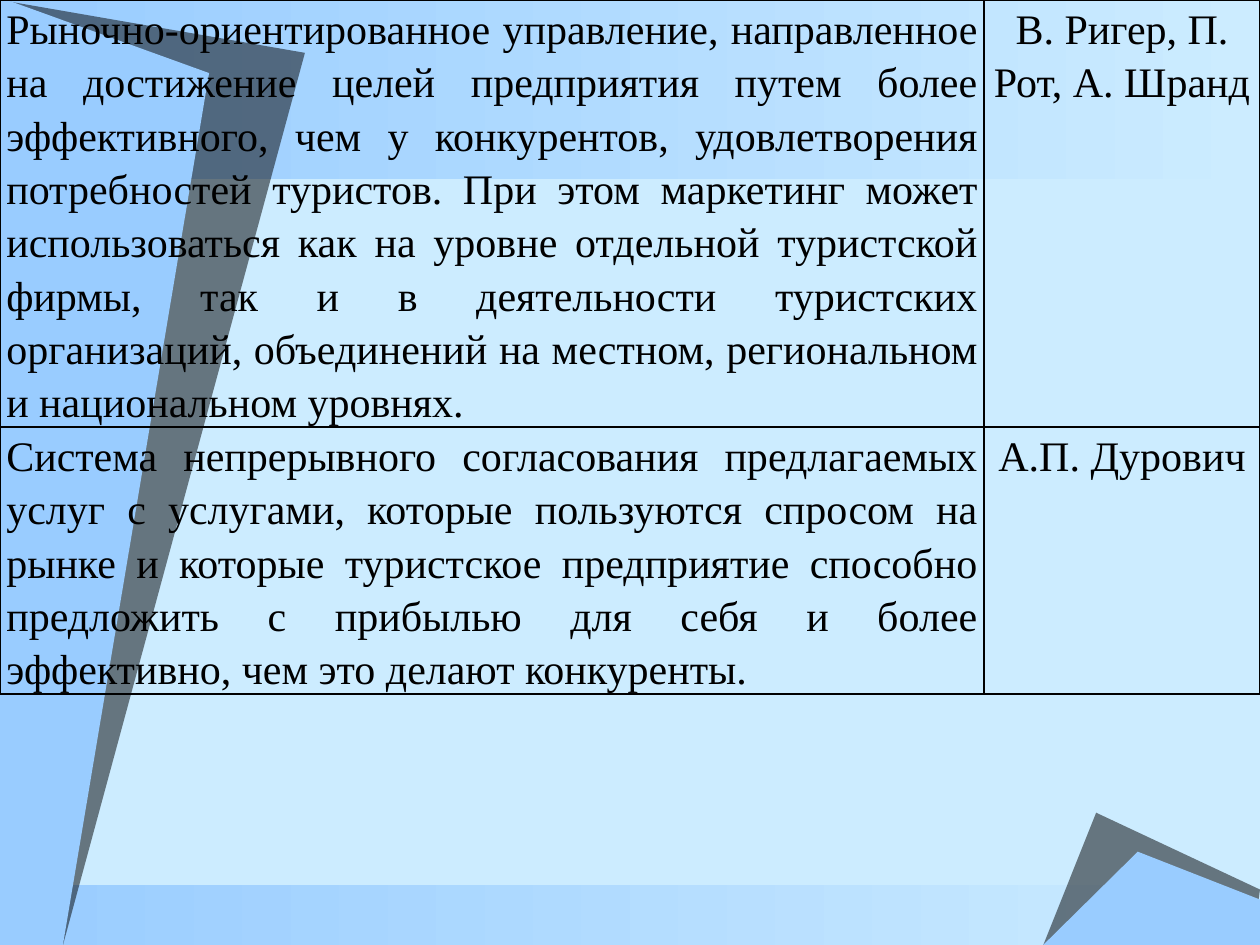
from lxml.etree import SubElement
from pptx import Presentation
from pptx.dml.color import RGBColor
from pptx.enum.shapes import MSO_SHAPE
from pptx.enum.text import PP_ALIGN
from pptx.oxml.ns import qn
from pptx.util import Inches, Pt

W, H = 10, 7.5
BLACK = RGBColor(0x00, 0x00, 0x00)
BLUE = RGBColor(0x99, 0xCC, 0xFF)
PALE = RGBColor(0xCC, 0xEC, 0xFF)
FONT = "Times New Roman"

prs = Presentation()
prs.slide_width, prs.slide_height = Inches(W), Inches(H)
s = prs.slides.add_slide(prs.slide_layouts[6])
s.background.fill.solid()
s.background.fill.fore_color.rgb = PALE


def add_band(top, height):
    """Full-width band fading from blue to the background colour."""
    sp = s.shapes.add_shape(MSO_SHAPE.RECTANGLE, 0, Inches(top), Inches(W), Inches(height))
    sp.shadow.inherit = False
    sp.line.fill.background()
    sp.fill.gradient()
    sp.fill.gradient_angle = 0
    for stop, color, position in zip(sp.fill.gradient_stops, (BLUE, PALE), (0, 1)):
        stop.color.rgb = color
        stop.position = position


def add_polygon(points, color, alpha=100):
    """Closed outline through points in inches, alpha in percent."""
    start, *rest = [(Inches(x), Inches(y)) for x, y in points]
    builder = s.shapes.build_freeform(*start)
    builder.add_line_segments(rest, close=True)
    sp = builder.convert_to_shape()
    sp.shadow.inherit = False
    sp.line.fill.background()
    sp.fill.solid()
    sp.fill.fore_color.rgb = color
    if alpha < 100:
        clr = sp.fill._xPr.find(qn("a:solidFill"))[0]
        SubElement(clr, qn("a:alpha")).set("val", str(alpha * 1000))


# Bottom band and right corner
add_band(7.02, 0.48)
add_polygon([(8.7, 6.45), (W, 7.06), (9.94, H), (8.28, H)], BLACK, 50)
add_polygon([(8.28, H), (9.03, 6.76), (W, 7.14), (W, H)], BLUE)

# Top band and left wedge
add_band(0, 1.42)
add_polygon([(0, 0), (2.42, 0.42), (0.5, H), (0, H)], BLACK, 50)
add_polygon([(0, -0.02), (1.66, 0.58), (0.5, H), (0, H)], BLUE)

# Definitions and their authors
DEFINITIONS = [
    ("Рыночно-ориентированное управление, направленное на достижение целей "
     "предприятия путем более эффективного, чем у конкурентов, удовлетворения "
     "потребностей туристов. При этом маркетинг может использоваться как на уровне "
     "отдельной туристской фирмы, так и в деятельности туристских организаций, "
     "объединений на местном, региональном и национальном уровнях.",
     "В. Ригер, П. Рот, А. Шранд"),
    ("Система непрерывного согласования предлагаемых услуг с услугами, которые "
     "пользуются спросом на рынке и которые туристское предприятие способно "
     "предложить с прибылью для себя и более эффективно, чем это делают конкуренты.",
     "А.П. Дурович"),
]
COLS = (7.81, 2.19)
ROWS = (3.39, 2.12)
ALIGNS = (PP_ALIGN.JUSTIFY, PP_ALIGN.CENTER)

table = s.shapes.add_table(len(ROWS), len(COLS), 0, 0, Inches(W), Inches(sum(ROWS))).table
table.first_row = table.horz_banding = False
for column, width in zip(table.columns, COLS):
    column.width = Inches(width)
for row, height, texts in zip(table.rows, ROWS, DEFINITIONS):
    row.height = Inches(height)
    for cell, text, align in zip(row.cells, texts, ALIGNS):
        cell.margin_left = cell.margin_right = Inches(0.05)
        cell.margin_top = cell.margin_bottom = 0
        tcPr = cell._tc.get_or_add_tcPr()
        for side in ("lnL", "lnR", "lnT", "lnB"):
            ln = SubElement(tcPr, qn(f"a:{side}"), w=str(Pt(1)))
            fill = SubElement(ln, qn("a:solidFill"))
            SubElement(fill, qn("a:srgbClr"), val=str(BLACK))
        cell.fill.background()
        p = cell.text_frame.paragraphs[0]
        p.alignment = align
        p.line_spacing = 1.15
        r = p.add_run()
        r.text = text
        r.font.name = FONT
        r.font.size = Pt(24)
        r.font.color.rgb = BLACK

prs.save("out.pptx")
